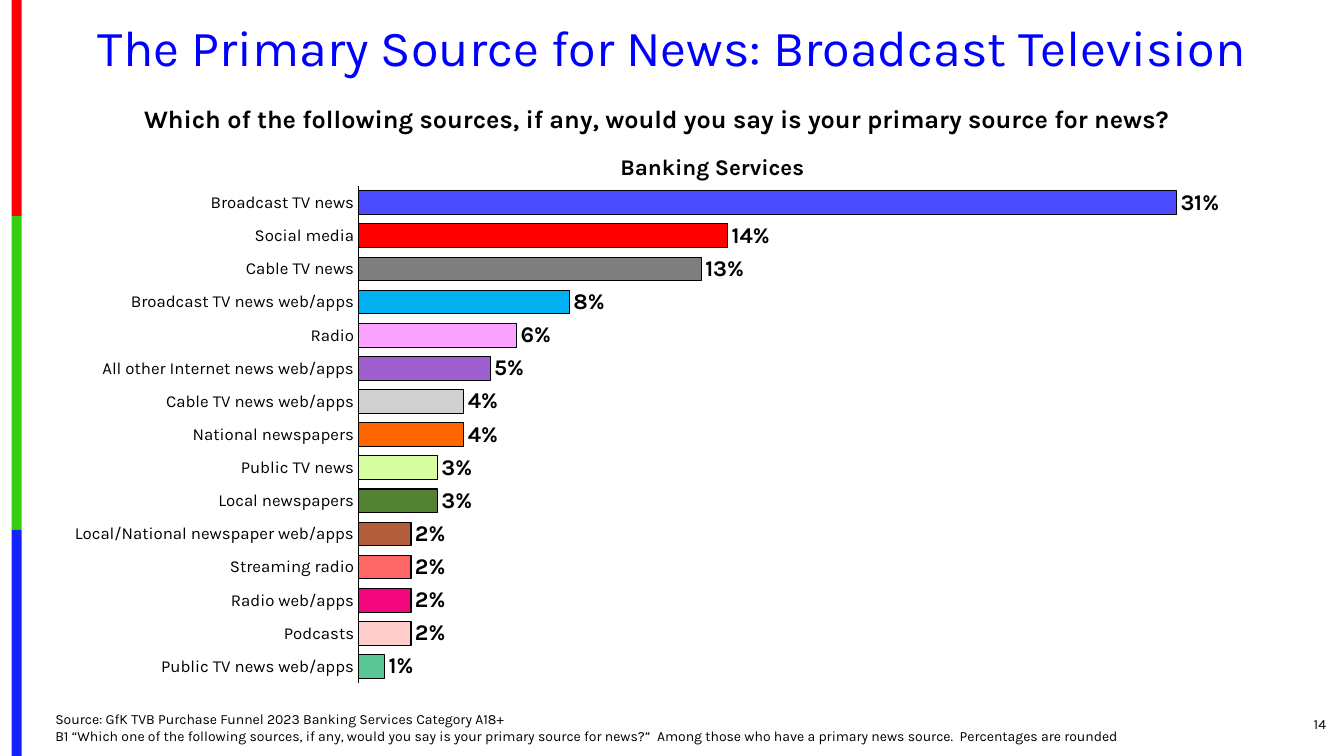
import pptx
import pptx.chart.data
import pptx.dml.color
import pptx.enum.chart
import pptx.enum.shapes
import pptx.enum.text
import pptx.oxml
import pptx.util
from dataclasses import dataclass

ALIGN = pptx.enum.text.PP_ALIGN
ANCHOR = pptx.enum.text.MSO_ANCHOR
WIDTH, HEIGHT = pptx.util.Inches(13.33), pptx.util.Inches(7.5)


@dataclass(frozen=True)
class Theme:
    font: str = "Karla"
    ink: str = "000000"
    title_color: str = "0000FF"
    series_color: str = "3333FF"
    title: int = 36
    question: int = 18
    category: int = 16
    value: int = 16
    axis: int = 12
    small: int = 10
    outline: float = 0.75


THEME = Theme()

# Stripe colour and the share of the height (%) where it ends
STRIPES = [("FE0000", 28.6), ("36CF12", 70.1), ("1322FE", 100)]

# News source, share of respondents, bar colour
NEWS_SOURCES = [
    ("Broadcast TV news", 0.31, "4C4CFF"),
    ("Social media", 0.14, "FF0000"),
    ("Cable TV news", 0.13, "7F7F7F"),
    ("Broadcast TV news web/apps", 0.08, "00B0F0"),
    ("Radio", 0.06, "FAA4FF"),
    ("All other Internet news web/apps", 0.05, "9F5FCF"),
    ("Cable TV news web/apps", 0.04, "D0D0D0"),
    ("National newspapers", 0.04, "FF6600"),
    ("Public TV news", 0.03, "D7FFA1"),
    ("Local newspapers", 0.03, "548235"),
    ("Local/National newspaper web/apps", 0.02, "B25E3C"),
    ("Streaming radio", 0.02, "FF6666"),
    ("Radio web/apps", 0.02, "F3057C"),
    ("Podcasts", 0.02, "FFCCCC"),
    ("Public TV news web/apps", 0.01, "5AC695"),
]

SOURCE_LINES = [
    "Source: GfK TVB Purchase Funnel 2023 Banking Services Category A18+",
    "B1 “Which one of the following sources, if any, would you say is your primary "
    "source for news?”  Among those who have a primary news source.  "
    "Percentages are rounded",
]


def rgb(color):
    return pptx.dml.color.RGBColor.from_string(color)


def place(x, y, w, h):
    """Turn percentages of the slide's size into lengths."""
    return [pptx.util.Emu(round(share * side / 100))
            for share, side in ((x, WIDTH), (y, HEIGHT), (w, WIDTH), (h, HEIGHT))]


def style_font(font, size, color=THEME.ink, bold=False):
    font.name = THEME.font
    font.size = pptx.util.Pt(size)
    font.bold = bold
    font.color.rgb = rgb(color)


def outline(line):
    line.color.rgb = rgb(THEME.ink)
    line.width = pptx.util.Pt(THEME.outline)


def add_text(slide, area, lines, size, color=THEME.ink, bold=False,
             align=ALIGN.LEFT, anchor=ANCHOR.TOP, wrap=True, spacing=1.0):
    tf = slide.shapes.add_textbox(*place(*area)).text_frame
    tf.word_wrap = wrap
    tf.vertical_anchor = anchor
    p = tf.paragraphs[0]
    p.alignment = align
    p.line_spacing = spacing
    for i, line in enumerate(lines):
        if i:
            p.add_line_break()
        r = p.add_run()
        r.text = line
        style_font(r.font, size, color, bold)


def add_stripes(slide):
    top = 0
    for color, bottom in STRIPES:
        sp = slide.shapes.add_shape(pptx.enum.shapes.MSO_SHAPE.RECTANGLE,
                                    *place(0.86, top, 0.75, bottom - top))
        sp.shadow.inherit = False
        sp.fill.solid()
        sp.fill.fore_color.rgb = rgb(color)
        sp.line.fill.background()
        top = bottom


def set_plot_area(chart, x, y, w, h):
    """Fix the inner plot area, in shares of the chart's size."""
    plot_area = chart._chartSpace.chart.plotArea
    for old in plot_area.xpath("c:layout"):
        plot_area.remove(old)
    modes = '<c:layoutTarget val="inner"/><c:xMode val="edge"/><c:yMode val="edge"/>'
    sizes = "".join(f'<c:{tag} val="{share}"/>'
                    for tag, share in zip("xywh", (x, y, w, h)))
    plot_area.insert(0, pptx.oxml.parse_xml(
        '<c:layout xmlns:c="http://schemas.openxmlformats.org/drawingml/2006/chart">'
        f"<c:manualLayout>{modes}{sizes}</c:manualLayout></c:layout>"))


def add_news_chart(slide, area):
    names, values, colors = zip(*NEWS_SOURCES)
    data = pptx.chart.data.CategoryChartData(number_format="0%")
    data.categories = names
    data.add_series("Series 1", values)
    chart = slide.shapes.add_chart(pptx.enum.chart.XL_CHART_TYPE.BAR_CLUSTERED,
                                   *place(*area), data).chart
    chart.has_legend = False
    chart.has_title = False
    style_font(chart.font, THEME.small)
    set_plot_area(chart, 0.254, 0.085, 0.705, 0.879)

    # Axes
    axis = chart.category_axis
    axis.reverse_order = True
    axis.major_tick_mark = pptx.enum.chart.XL_TICK_MARK.NONE
    axis.has_major_gridlines = False
    style_font(axis.tick_labels.font, THEME.axis)
    outline(axis.format.line)
    scale = chart.value_axis
    scale.minimum_scale, scale.maximum_scale = 0, 0.35
    scale.has_major_gridlines = False
    scale.visible = False

    # Bars
    plot = chart.plots[0]
    plot.gap_width = 40
    plot.vary_by_categories = False
    series = plot.series[0]
    series.format.fill.solid()
    series.format.fill.fore_color.rgb = rgb(THEME.series_color)
    outline(series.format.line)
    for i, color in enumerate(colors):
        bar = series.points[i].format
        bar.fill.solid()
        bar.fill.fore_color.rgb = rgb(color)
        outline(bar.line)

    # Value labels
    labels = series.data_labels
    labels.show_value = True
    labels.number_format = "0%"
    labels.number_format_is_linked = False
    labels.position = pptx.enum.chart.XL_LABEL_POSITION.OUTSIDE_END
    style_font(labels.font, THEME.value, bold=True)


def main():
    prs = pptx.Presentation()
    prs.slide_width, prs.slide_height = WIDTH, HEIGHT
    slide = prs.slides.add_slide(prs.slide_layouts[6])

    add_stripes(slide)

    # Headline, page number, source and question
    add_text(slide, (3.45, 2.27, 93.17, 8.67),
             ["The Primary Source for News: Broadcast Television"], THEME.title,
             color=THEME.title_color, align=ALIGN.CENTER, anchor=ANCHOR.MIDDLE,
             spacing=0.9)
    add_text(slide, (91.3, 93.07, 8.1, 5.33), ["14"], THEME.small,
             align=ALIGN.RIGHT, anchor=ANCHOR.MIDDLE)
    add_text(slide, (3.38, 93.33, 81.7, 6.67), SOURCE_LINES, THEME.small)
    add_text(slide, (9.98, 13.07, 83.57, 5.33),
             ["Which of the following sources, if any, would you say is your "
              "primary source for news?"], THEME.question, bold=True, wrap=False)

    # Chart with its heading
    add_news_chart(slide, (1.88, 18.27, 97.52, 74.8))
    add_text(slide, (45, 19.6, 16, 4.93), ["Banking Services"], THEME.category,
             bold=True, align=ALIGN.CENTER, wrap=False)

    prs.save("out.pptx")


if __name__ == "__main__":
    main()
